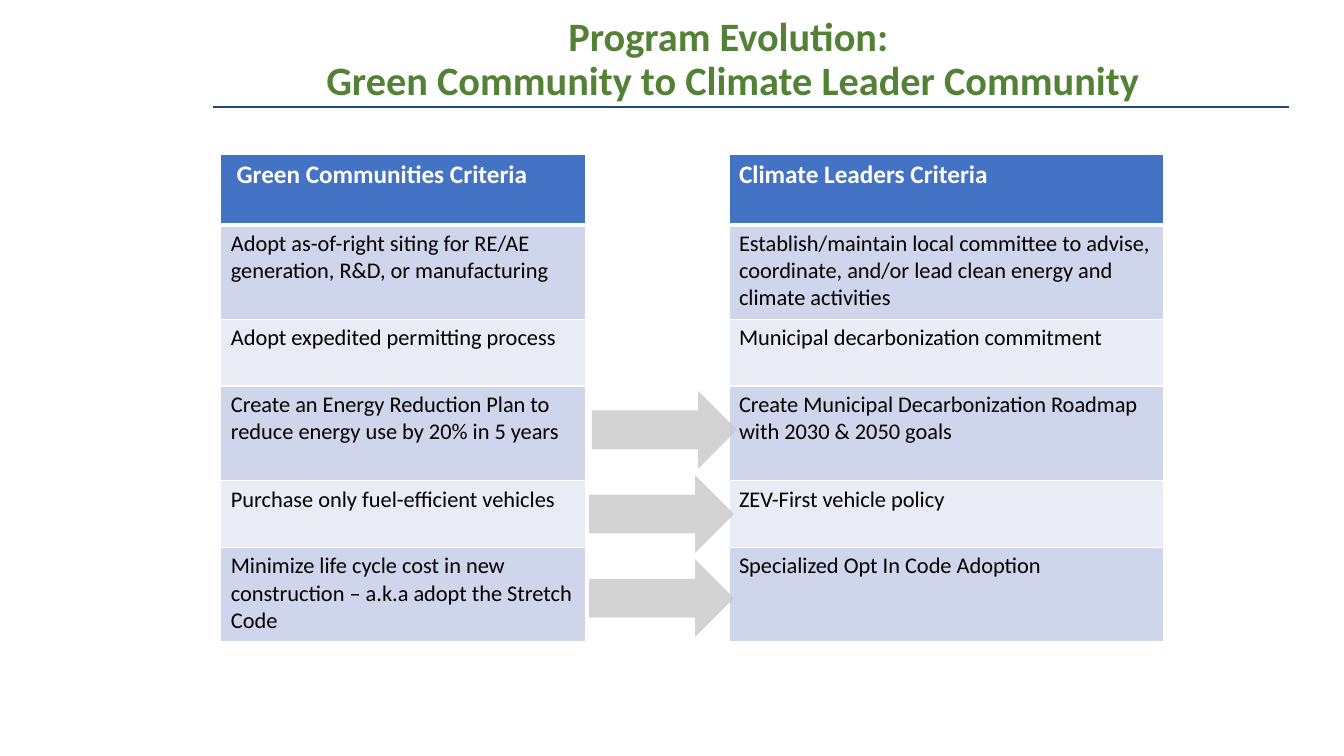
from lxml import etree
from pptx import Presentation
from pptx.dml.color import RGBColor
from pptx.enum.shapes import MSO_CONNECTOR, MSO_SHAPE
from pptx.enum.text import MSO_ANCHOR, PP_ALIGN
from pptx.oxml.ns import qn
from pptx.util import Inches, Pt

STRAIGHT = MSO_CONNECTOR.STRAIGHT
RIGHT_ARROW = MSO_SHAPE.RIGHT_ARROW
MIDDLE = MSO_ANCHOR.MIDDLE
CENTER = PP_ALIGN.CENTER

TITLE = ("Program Evolution: ", "Green Community to Climate Leader Community")
CRITERIA = [
    (" Green Communities Criteria", "Climate Leaders Criteria"),
    ("Adopt as-of-right siting for RE/AE generation, R&D, or manufacturing",
     "Establish/maintain local committee to advise, coordinate, and/or lead "
     "clean energy and climate activities"),
    ("Adopt expedited permitting process", "Municipal decarbonization commitment"),
    ("Create an Energy Reduction Plan to reduce energy use by 20% in 5 years",
     "Create Municipal Decarbonization Roadmap with 2030 & 2050 goals"),
    ("Purchase only fuel-efficient vehicles", "ZEV-First vehicle policy"),
    ("Minimize life cycle cost in new construction – a.k.a adopt the Stretch Code",
     "Specialized Opt In Code Adoption"),
]
COLUMN_WIDTHS = (3.62, 1.42, 4.31)
HEADER_HEIGHT, TALL_ROW, SHORT_ROW = 0.7, 0.94, 0.66
TABLE_LEFT, TABLE_TOP = 2.19, 1.53
ARROW_LEFTS = (5.87, 5.84, 5.84)
ARROW_TOP, ARROW_STEP = 3.88, 0.835
ARROW_WIDTH, ARROW_HEIGHT = 1.44, 0.77

THEME = {
    "font": "Calibri",
    "title": "538135", "rule": "1F497D", "header": "4472C4",
    "odd": "CFD5EA", "even": "E9EBF5", "white": "FFFFFF",
    "body": "000000", "arrow": "C9C9C9",
    "title_size": 28.8, "header_size": 18, "body_size": 16,
}


def color(name):
    return RGBColor.from_string(THEME[name])


def style_font(font, size, color_name, bold):
    font.name = THEME["font"]
    font.size = Pt(THEME[size])
    font.color.rgb = color(color_name)
    font.bold = bold


def add_title(slide):
    box = slide.shapes.add_textbox(Inches(3), Inches(0.28), Inches(8.54), Inches(0.64))
    frame = box.text_frame
    frame.word_wrap = True
    frame.vertical_anchor = MIDDLE
    paragraph = frame.paragraphs[0]
    paragraph.alignment = CENTER
    paragraph.line_spacing = 0.9
    for index, line in enumerate(TITLE):
        if index:
            paragraph.add_line_break()
        run = paragraph.add_run()
        run.text = line
        style_font(run.font, "title_size", "title", True)


def add_rule(slide):
    rule = slide.shapes.add_connector(
        STRAIGHT, Inches(2.11), Inches(1.06), Inches(12.78), Inches(1.06))
    rule.line.color.rgb = color("rule")
    rule.line.width = Pt(1.5)
    etree.SubElement(rule._element.spPr, qn("a:effectLst"))


def set_borders(cell, row):
    properties = cell._tc.get_or_add_tcPr()
    widths = {"L": 1, "R": 1, "T": 3 if row == 1 else 1, "B": 3 if row == 0 else 1}
    for side, width in widths.items():
        line = etree.SubElement(properties, qn("a:ln" + side), w=str(Pt(width)))
        fill = etree.SubElement(line, qn("a:solidFill"))
        etree.SubElement(fill, qn("a:srgbClr"), val=THEME["white"])


def fill_cell(cell, name):
    cell.fill.solid()
    cell.fill.fore_color.rgb = color(name)


def add_criteria_table(slide):
    heights = [HEADER_HEIGHT] + [
        TALL_ROW if row % 2 else SHORT_ROW for row in range(1, len(CRITERIA))]
    table = slide.shapes.add_table(
        len(CRITERIA), len(COLUMN_WIDTHS), Inches(TABLE_LEFT), Inches(TABLE_TOP),
        Inches(sum(COLUMN_WIDTHS)), Inches(sum(heights))).table
    table.first_row = False
    table.horz_banding = False
    for column, width in zip(table.columns, COLUMN_WIDTHS):
        column.width = Inches(width)
    for row, (green, leader) in enumerate(CRITERIA):
        table.rows[row].height = Inches(heights[row])
        role = "body" if row else "header"
        band = ("odd" if row % 2 else "even") if row else "header"
        for column, text in enumerate((green, None, leader)):
            cell = table.cell(row, column)
            set_borders(cell, row)
            if text:
                fill_cell(cell, band)
                cell.text_frame.text = text
                style_font(cell.text_frame.paragraphs[0].runs[0].font, role + "_size",
                           "body" if row else "white", row == 0)
            elif row:
                fill_cell(cell, "white")
            else:
                cell.fill.background()


def add_arrows(slide):
    for index, left in enumerate(ARROW_LEFTS):
        arrow = slide.shapes.add_shape(
            RIGHT_ARROW, Inches(left), Inches(ARROW_TOP + index * ARROW_STEP),
            Inches(ARROW_WIDTH), Inches(ARROW_HEIGHT))
        arrow.shadow.inherit = False
        arrow.fill.solid()
        arrow.fill.fore_color.rgb = color("arrow")
        arrow.line.fill.background()
        shade = arrow._element.spPr.find(qn("a:solidFill"))[0]
        etree.SubElement(shade, qn("a:alpha"), val="80000")


def main():
    presentation = Presentation()
    presentation.slide_width = Inches(13.33)
    presentation.slide_height = Inches(7.5)
    slide = presentation.slides.add_slide(presentation.slide_layouts[6])
    add_rule(slide)
    add_criteria_table(slide)
    add_title(slide)
    add_arrows(slide)
    presentation.save("out.pptx")


if __name__ == "__main__":
    main()
